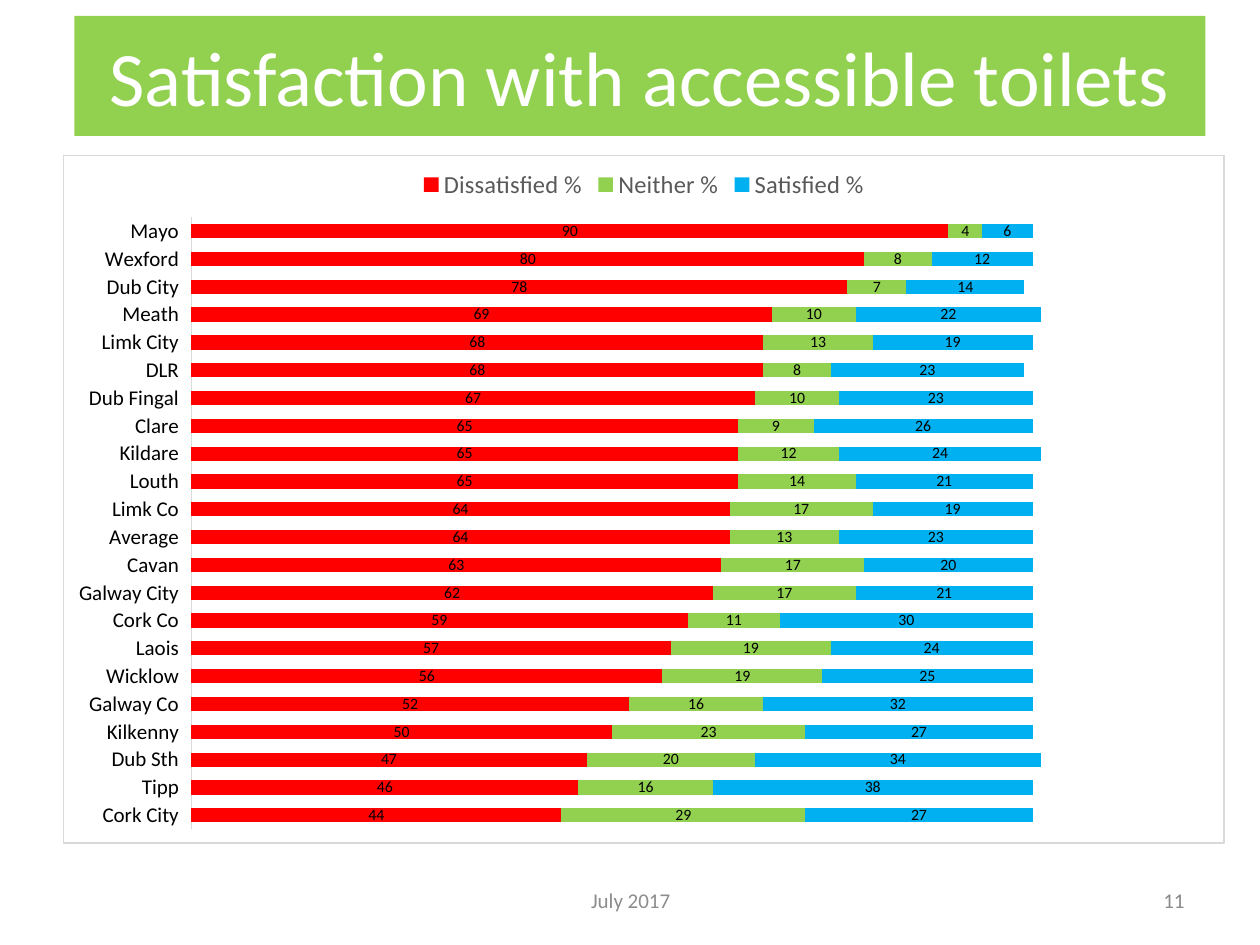
"""Build the slide on satisfaction with accessible toilets by county."""
from dataclasses import dataclass

from lxml import etree
from pptx import Presentation
from pptx.chart.data import CategoryChartData
from pptx.dml.color import RGBColor
from pptx.enum.chart import XL_CHART_TYPE, XL_LABEL_POSITION, XL_LEGEND_POSITION, XL_TICK_LABEL_POSITION, XL_TICK_MARK
from pptx.enum.text import MSO_ANCHOR, MSO_AUTO_SIZE, PP_ALIGN
from pptx.oxml import parse_xml
from pptx.util import Cm, Pt

STACKED_BARS = XL_CHART_TYPE.BAR_STACKED
LABEL_CENTER = XL_LABEL_POSITION.CENTER
LEGEND_TOP = XL_LEGEND_POSITION.TOP
LABELS_LOW = XL_TICK_LABEL_POSITION.LOW
NO_TICK = XL_TICK_MARK.NONE
MIDDLE = MSO_ANCHOR.MIDDLE
NO_AUTOFIT = MSO_AUTO_SIZE.NONE
CENTER = PP_ALIGN.CENTER
RIGHT = PP_ALIGN.RIGHT

FONT = "Calibri"
WHITE = RGBColor(0xFF, 0xFF, 0xFF)
BLACK = RGBColor(0, 0, 0)
RED = RGBColor(0xFF, 0, 0)
GREEN = RGBColor(0x92, 0xD0, 0x50)
BLUE = RGBColor(0, 0xB0, 0xF0)
LEGEND_GREY = RGBColor(0x59, 0x59, 0x59)
DATE_GREY = RGBColor(0x8C, 0x8C, 0x8C)
NUMBER_GREY = RGBColor(0x89, 0x89, 0x89)
LINE_GREY = RGBColor(0xD9, 0xD9, 0xD9)

CHART_NS = "http://schemas.openxmlformats.org/drawingml/2006/chart"
DRAWING_NS = "http://schemas.openxmlformats.org/drawingml/2006/main"
PLOT_LAYOUT = {"x": 0.11, "y": 0.09, "w": 0.87, "h": 0.89}


@dataclass(frozen=True)
class Answer:
    name: str
    color: RGBColor
    percents: tuple[int, ...]


@dataclass(frozen=True)
class FooterText:
    text: str
    left: float
    width: float
    alignment: PP_ALIGN
    color: RGBColor


COUNTIES = (
    "Cork City", "Tipp", "Dub Sth", "Kilkenny", "Galway Co", "Wicklow", "Laois", "Cork Co",
    "Galway City", "Cavan", "Average", "Limk Co", "Louth", "Kildare", "Clare", "Dub Fingal",
    "DLR", "Limk City", "Meath", "Dub City", "Wexford", "Mayo",
)
ANSWERS = (
    Answer("Dissatisfied %", RED, (44, 46, 47, 50, 52, 56, 57, 59, 62, 63, 64,
                                   64, 65, 65, 65, 67, 68, 68, 69, 78, 80, 90)),
    Answer("Neither %", GREEN, (29, 16, 20, 23, 16, 19, 19, 11, 17, 17, 13,
                                17, 14, 12, 9, 10, 8, 13, 10, 7, 8, 4)),
    Answer("Satisfied %", BLUE, (27, 38, 34, 27, 32, 25, 24, 30, 21, 20, 23,
                                 19, 21, 24, 26, 23, 23, 19, 22, 14, 12, 6)),
)
FOOTERS = (
    FooterText("July 2017", 8.69, 8.05, CENTER, DATE_GREY),
    FooterText("11", 18.21, 5.92, RIGHT, NUMBER_GREY),
)


def style_font(font, size: float, color: RGBColor) -> None:
    font.name = FONT
    font.size = Pt(size)
    font.color.rgb = color


def fill_frame(frame, text: str, size: float, color: RGBColor, alignment: PP_ALIGN) -> None:
    frame.text = text
    frame.word_wrap = True
    frame.auto_size = NO_AUTOFIT
    frame.vertical_anchor = MIDDLE
    paragraph = frame.paragraphs[0]
    paragraph.alignment = alignment
    style_font(paragraph.runs[0].font, size, color)


def add_title(slide) -> None:
    title = slide.shapes.title
    title.left, title.top, title.width, title.height = Cm(1.5), Cm(0.32), Cm(22.8), Cm(2.42)
    title.fill.solid()
    title.fill.fore_color.rgb = GREEN
    fill_frame(title.text_frame, "Satisfaction with accessible toilets", 44, WHITE, CENTER)


def add_footer(slide, footer: FooterText) -> None:
    box = slide.shapes.add_textbox(Cm(footer.left), Cm(17.65), Cm(footer.width), Cm(1.01))
    fill_frame(box.text_frame, footer.text, 12, footer.color, footer.alignment)


def frame_chart(chart) -> None:
    space = chart._chartSpace
    space.chart.addnext(parse_xml(
        f'<c:spPr xmlns:c="{CHART_NS}" xmlns:a="{DRAWING_NS}">'
        f'<a:solidFill><a:srgbClr val="{WHITE}"/></a:solidFill>'
        f'<a:ln w="{Pt(0.75)}"><a:solidFill><a:srgbClr val="{LINE_GREY}"/></a:solidFill></a:ln>'
        '</c:spPr>'))
    plot_area = space.chart.plotArea
    for automatic in plot_area.findall(f"{{{CHART_NS}}}layout"):
        plot_area.remove(automatic)
    layout = etree.Element(f"{{{CHART_NS}}}layout")
    manual = etree.SubElement(layout, f"{{{CHART_NS}}}manualLayout")
    settings = {"layoutTarget": "inner", "xMode": "edge", "yMode": "edge", **PLOT_LAYOUT}
    for tag, value in settings.items():
        etree.SubElement(manual, f"{{{CHART_NS}}}{tag}", val=str(value))
    plot_area.insert(0, layout)


def add_satisfaction_chart(slide) -> None:
    figures = CategoryChartData(number_format="#,##0")
    figures.categories = COUNTIES
    for answer in ANSWERS:
        figures.add_series(answer.name, answer.percents)
    chart = slide.shapes.add_chart(
        STACKED_BARS, Cm(1.27), Cm(3.12), Cm(23.42), Cm(13.89), figures).chart
    style_font(chart.font, 10, BLACK)
    chart.has_title = False
    chart.has_legend = True
    chart.legend.position = LEGEND_TOP
    chart.legend.include_in_layout = False
    style_font(chart.legend.font, 14, LEGEND_GREY)

    counties = chart.category_axis
    counties.major_tick_mark = counties.minor_tick_mark = NO_TICK
    counties.tick_label_position = LABELS_LOW
    counties.format.line.color.rgb = LINE_GREY
    counties.format.line.width = Pt(0.75)
    style_font(counties.tick_labels.font, 12, BLACK)
    percents = chart.value_axis
    percents.minimum_scale, percents.maximum_scale = 0, 120
    percents.has_major_gridlines = False
    percents.visible = False

    bars = chart.plots[0]
    bars.gap_width, bars.overlap = 95, 100
    bars.vary_by_categories = False
    for series, answer in zip(bars.series, ANSWERS):
        series.format.fill.solid()
        series.format.fill.fore_color.rgb = answer.color
        labels = series.data_labels
        labels.show_value = True
        labels.number_format = "#,##0"
        labels.number_format_is_linked = False
        labels.position = LABEL_CENTER
        style_font(labels.font, 9, BLACK)
    frame_chart(chart)


def main() -> None:
    deck = Presentation()
    deck.slide_width, deck.slide_height = Cm(25.4), Cm(19.05)
    slide = deck.slides.add_slide(deck.slide_layouts[5])
    add_title(slide)
    add_satisfaction_chart(slide)
    for footer in FOOTERS:
        add_footer(slide, footer)
    deck.save("out.pptx")


if __name__ == "__main__":
    main()
